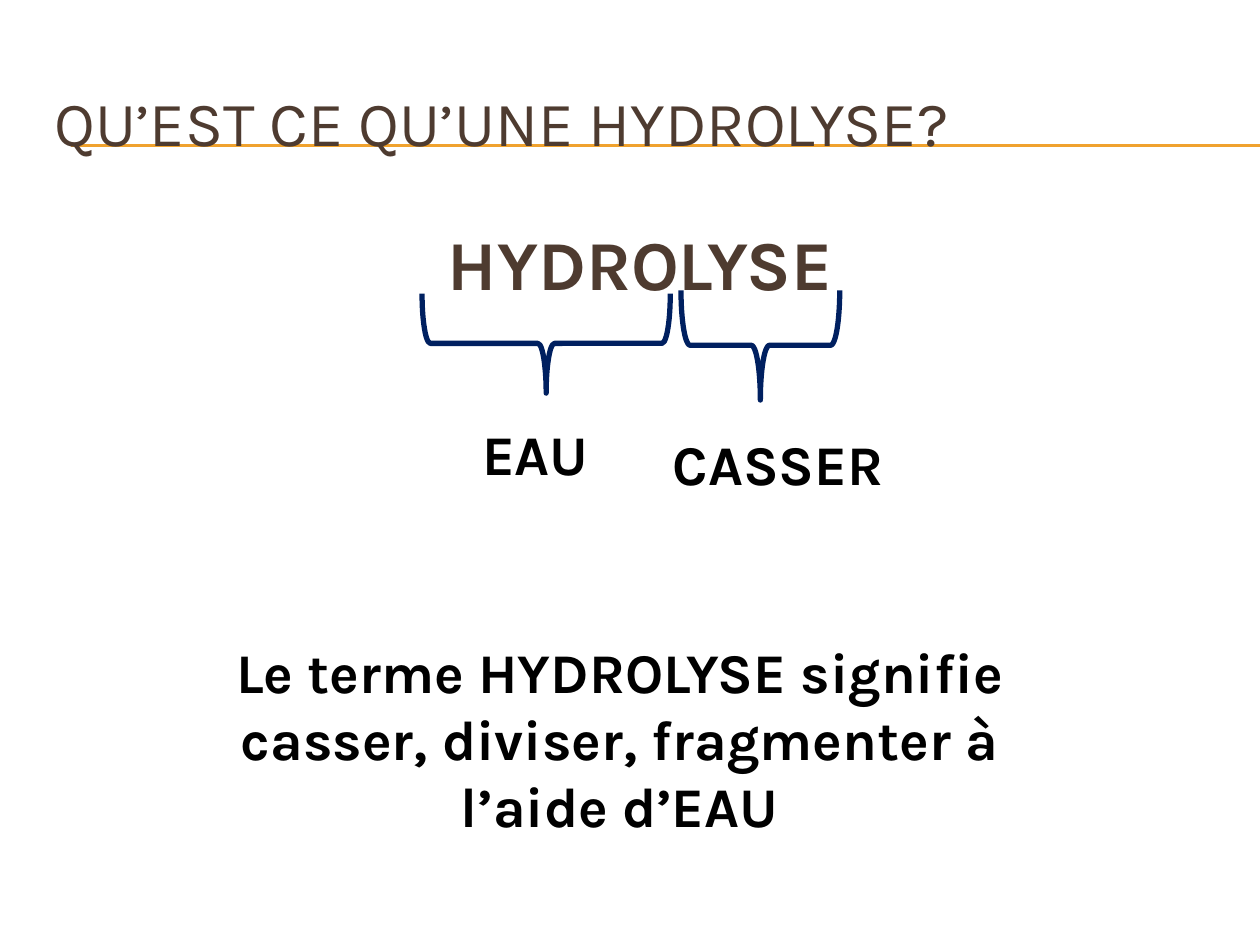
"""Build a slide explaining the word hydrolysis."""
import pptx
import pptx.util
import pptx.dml.color
import pptx.enum.shapes
import pptx.enum.text
import pptx.oxml.ns
import lxml.etree

Inches, Pt = pptx.util.Inches, pptx.util.Pt
ALIGN = pptx.enum.text.PP_ALIGN
AUTO = pptx.enum.text.MSO_AUTO_SIZE

FONT = "Karla"
COLOURS = {"brown": "4E3B30", "gold": "F0A22E", "navy": "002060", "black": "000000"}
TITLE = ("QU’EST CE QU’UNE HYDROLYSE?", (0.33, 0.5, 9.5, 0.92))
RULES = [1.15, 1.16]
WORD = ("HYDROLYSE", (0.33, 1.7, 9.5, 4.95))
BRACES = [(3.94, 1.74, 0.79, 1.97), (5.6, 2.11, 0.87, 1.26)]
MEANINGS = [
    ("EAU", (2.87, 3.28, 2.76, 0.64), ALIGN.CENTER),
    ("CASSER", (5.24, 3.36, 2.76, 0.64), ALIGN.LEFT),
    ("Le terme HYDROLYSE signifie casser, diviser, fragmenter à l’aide d’EAU",
     (1.22, 5.01, 7.4, 1.18), ALIGN.CENTER),
]


def rgb(name):
    return pptx.dml.color.RGBColor.from_string(COLOURS[name])


def write(shape, text, size, colour, align, bold, auto_size=AUTO.NONE):
    frame = shape.text_frame
    frame.word_wrap = True
    frame.auto_size = auto_size
    paragraph = frame.paragraphs[0]
    paragraph.text = text
    paragraph.alignment = align
    font = paragraph.font
    font.name, font.size, font.bold = FONT, Pt(size), bold
    font.color.rgb = rgb(colour)


def add_text(slide, box, *style):
    write(slide.shapes.add_textbox(*map(Inches, box)), *style)


def add_rule(slide, title, y):
    rule = slide.shapes.add_connector(
        pptx.enum.shapes.MSO_CONNECTOR.STRAIGHT,
        Inches(0.56), Inches(y), Inches(10), Inches(y))
    rule.line.color.rgb = rgb("gold")
    rule.line.width = Pt(0.75)
    lxml.etree.SubElement(rule._element.spPr, pptx.oxml.ns.qn("a:effectLst"))
    title._element.addprevious(rule._element)


def add_brace(slide, box):
    brace = slide.shapes.add_shape(
        pptx.enum.shapes.MSO_SHAPE.LEFT_BRACE, *map(Inches, box))
    brace.rotation = 270
    brace.shadow.inherit = False
    brace.fill.background()
    brace.line.color.rgb = rgb("navy")
    brace.line.width = Pt(3)


def main():
    deck = pptx.Presentation()
    deck.slide_width, deck.slide_height = Inches(10), Inches(7.5)
    slide = deck.slides.add_slide(deck.slide_layouts[5])

    heading, box = TITLE
    title = slide.shapes.title
    title.left, title.top, title.width, title.height = map(Inches, box)
    write(title, heading, 36, "brown", ALIGN.LEFT, False)
    title.text_frame.vertical_anchor = pptx.enum.text.MSO_ANCHOR.MIDDLE
    for y in RULES:
        add_rule(slide, title, y)

    word, box = WORD
    add_text(slide, box, word, 40, "brown", ALIGN.CENTER, True)
    for box in BRACES:
        add_brace(slide, box)
    for text, box, align in MEANINGS:
        add_text(slide, box, text, 32, "black", align, True, AUTO.SHAPE_TO_FIT_TEXT)

    deck.save("out.pptx")


if __name__ == "__main__":
    main()
